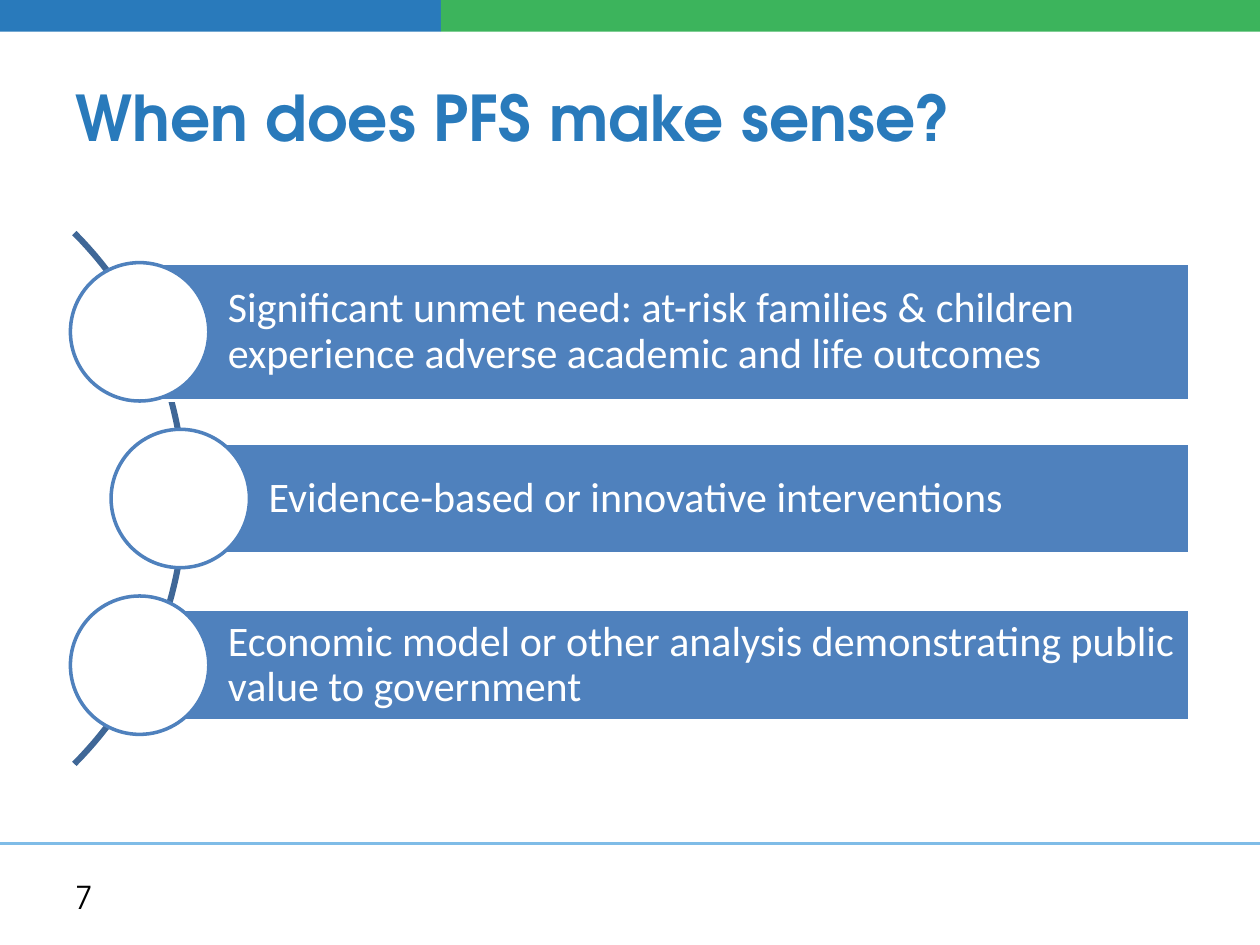
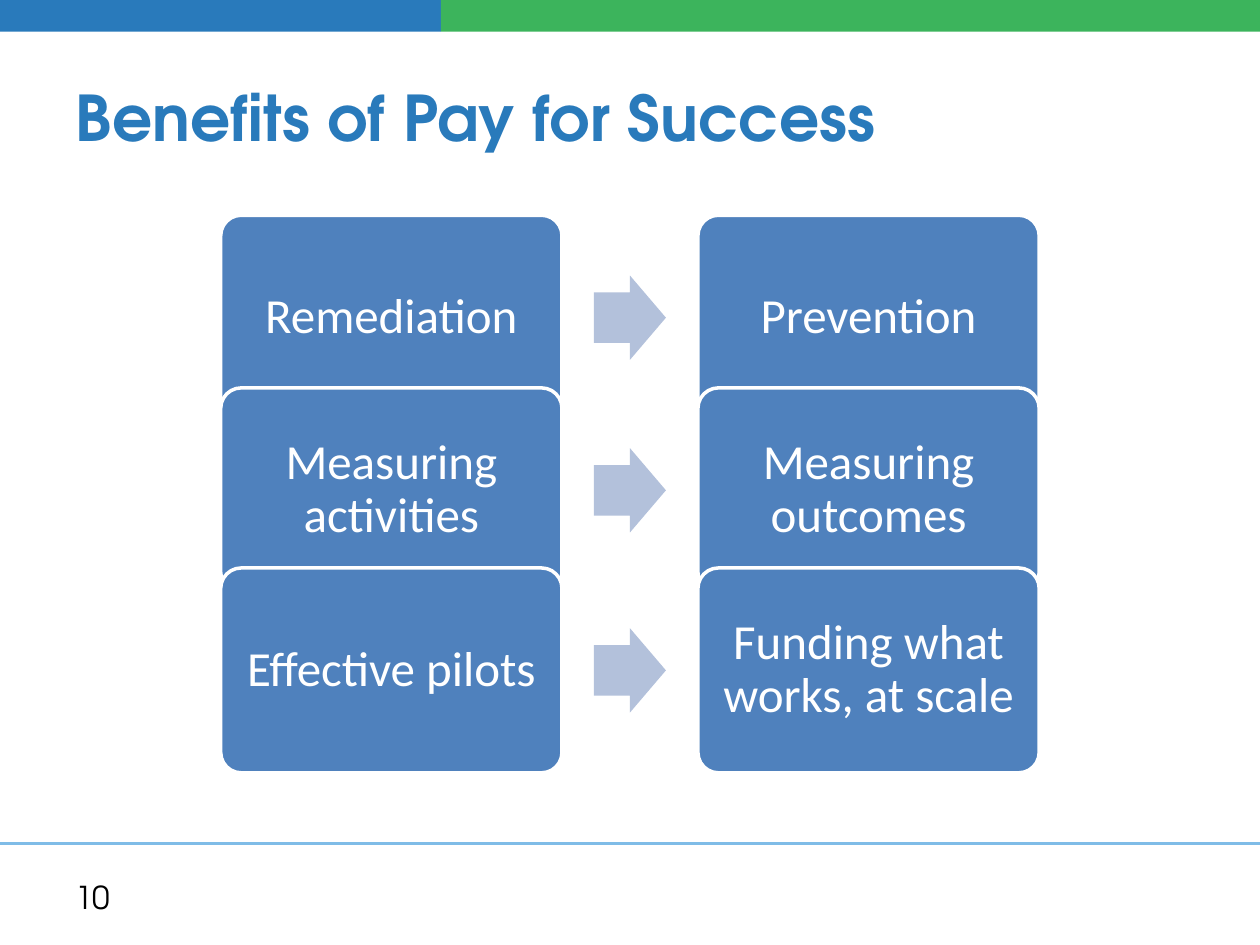
from math import cos, pi, sin

from lxml import etree
from pptx import Presentation
from pptx.dml.color import RGBColor
from pptx.enum.shapes import MSO_CONNECTOR, MSO_SHAPE
from pptx.enum.text import MSO_ANCHOR, MSO_AUTO_SIZE, PP_ALIGN
from pptx.oxml.ns import qn
from pptx.util import Cm, Pt

BLUE = RGBColor(0x29, 0x7A, 0xBB)
GREEN = RGBColor(0x3C, 0xB4, 0x5C)
SKY = RGBColor(0x7F, 0xBC, 0xE7)
STEEL = RGBColor(0x4F, 0x81, 0xBD)
NAVY = RGBColor(0x3F, 0x67, 0x97)
PALE = RGBColor(0xB3, 0xC1, 0xDB)
WHITE = RGBColor(0xFF, 0xFF, 0xFF)
BLACK = RGBColor(0x00, 0x00, 0x00)

HEAD_FONT = "TeX Gyre Adventor"
BODY_FONT = "Calibri"
RECT = MSO_SHAPE.RECTANGLE
ROUND = MSO_SHAPE.ROUNDED_RECTANGLE
OVAL = MSO_SHAPE.OVAL
ARROW = MSO_SHAPE.RIGHT_ARROW
STRAIGHT = MSO_CONNECTOR.STRAIGHT
LEFT, CENTER = PP_ALIGN.LEFT, PP_ALIGN.CENTER
MIDDLE = MSO_ANCHOR.MIDDLE
NO_FIT = MSO_AUTO_SIZE.NONE

WIDE, HIGH = 25.4, 19.05
BAND = 0.64
SPLIT = 8.89
NEEDS_BOX = (1.42, 4.7, 22.56, 10.7)
SWAPS_BOX = (4.45, 4.34, 16.5, 11.24)

# text, shift of the circle to the right, bar height
NEEDS = [
    ("Significant unmet need: at-risk families & children experience "
     "adverse academic and life outcomes", 0, 2.77),
    ("Evidence-based or innovative interventions", 0.82, 2.24),
    ("Economic model or other analysis demonstrating public value "
     "to government", 0, 2.24),
]
# from, to, distance from the top
SWAPS = [
    ("Remediation", "Prevention", 0),
    ("Measuring activities", "Measuring outcomes", 3.48),
    ("Effective pilots", "Funding what works, at scale", 7.11),
]


def add_box(slide, kind, box, fill, line=None):
    shape = slide.shapes.add_shape(kind, *map(Cm, box))
    shape.shadow.inherit = False
    shape.fill.solid()
    shape.fill.fore_color.rgb = fill
    if line is None:
        shape.line.fill.background()
    else:
        shape.line.color.rgb = line
        shape.line.width = Pt(2)
    return shape


def write(shape, text, font, size, color, align=LEFT, bold=False, lead=1.0):
    frame = shape.text_frame
    frame.word_wrap = True
    frame.auto_size = NO_FIT
    frame.vertical_anchor = MIDDLE
    para = frame.paragraphs[0]
    para.alignment = align
    para.line_spacing = lead
    run = para.add_run()
    run.text = text
    run.font.name = font
    run.font.size = Pt(size)
    run.font.bold = bold
    run.font.color.rgb = color


def pad(shape, left, rest):
    frame = shape.text_frame
    frame.margin_left = Cm(left)
    frame.margin_top = frame.margin_right = frame.margin_bottom = Cm(rest)


def add_page(deck, title, number):
    """Add a slide with its bands, footer rule, title and page number."""
    slide = deck.slides.add_slide(deck.slide_layouts[5])
    add_box(slide, RECT, (0, 0, SPLIT, BAND), BLUE)
    add_box(slide, RECT, (SPLIT, 0, WIDE - SPLIT, BAND), GREEN)

    rule = slide.shapes.add_connector(
        STRAIGHT, Cm(0), Cm(17), Cm(WIDE), Cm(17))
    rule.line.color.rgb = SKY
    rule.line.width = Pt(1.5)
    etree.SubElement(rule.element.spPr, qn("a:effectLst"))

    head = slide.shapes.title
    head.left, head.top, head.width, head.height = map(
        Cm, (1.27, 0.76, 22.86, 3.18))
    write(head, title, HEAD_FONT, 36, BLUE, bold=True)

    foot = slide.shapes.add_textbox(*map(Cm, (1.27, 17.58, 5.92, 1.02)))
    write(foot, number, HEAD_FONT, 18, BLACK)
    return slide


def add_arc(slide, left, top, height):
    """Draw a quarter circle that bulges to the right."""
    radius = height / 2 ** 0.5
    mid_x, mid_y = left - height / 2, top + height / 2
    turns = [pi * (step / 60 - 0.5) / 2 for step in range(61)]
    dots = [(Cm(mid_x + radius * cos(t)), Cm(mid_y + radius * sin(t)))
            for t in turns]
    pen = slide.shapes.build_freeform(*dots[0])
    pen.add_line_segments(dots[1:], close=False)
    arc = pen.convert_to_shape()
    arc.shadow.inherit = False
    arc.fill.background()
    arc.line.color.rgb = NAVY
    arc.line.width = Pt(3.5)


def add_needs(slide, box):
    left, top, width, height = box
    size, step = 2.79, 3.36
    add_arc(slide, left + 0.08, top, height)
    for row, (text, shift, tall) in enumerate(NEEDS):
        mid = top + height / 2 + (row - 1) * step
        start = left + shift + size / 2
        bar = add_box(slide, RECT,
                      (start, mid - tall / 2, left + width - start, tall),
                      STEEL, WHITE)
        pad(bar, 1.78, 0.18)
        write(bar, text, BODY_FONT, 24, WHITE, lead=0.9)
        add_box(slide, OVAL, (left + shift, mid - size / 2, size, size),
                WHITE, STEEL)


def add_swaps(slide, box):
    left, top, width, height = box
    wide, tall = 6.88, height - SWAPS[-1][2]
    tip_w, tip_h = 1.45, 1.7
    for old, new, drop in SWAPS:
        y = top + drop
        for text, x in ((old, left), (new, left + width - wide)):
            card = add_box(slide, ROUND, (x, y, wide, tall), STEEL, WHITE)
            card.adjustments[0] = 0.1
            pad(card, 0.3, 0.3)
            write(card, text, BODY_FONT, 28, WHITE, CENTER, lead=0.9)
        tip = add_box(slide, ARROW,
                      (left + (width - tip_w) / 2, y + (tall - tip_h) / 2,
                       tip_w, tip_h), PALE)
        tip.adjustments[0] = 0.6
        tip.adjustments[1] = 0.5


def main():
    deck = Presentation()
    deck.slide_width, deck.slide_height = Cm(WIDE), Cm(HIGH)
    add_needs(add_page(deck, "When does PFS make sense?", "7"), NEEDS_BOX)
    add_swaps(add_page(deck, "Benefits of Pay for Success", "10"), SWAPS_BOX)
    deck.save("out.pptx")


if __name__ == "__main__":
    main()
